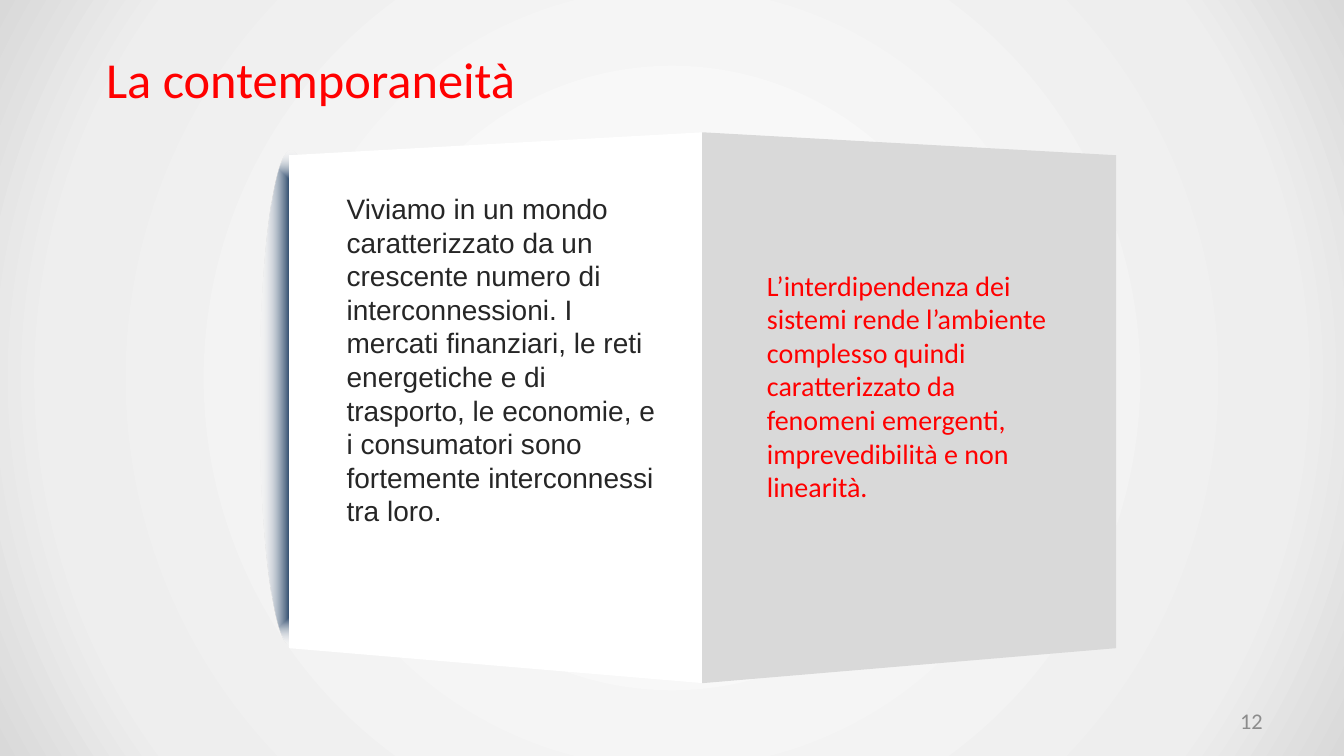
from lxml import etree
from pptx import Presentation
from pptx.dml.color import RGBColor
from pptx.enum.shapes import MSO_SHAPE
from pptx.enum.text import MSO_ANCHOR, PP_ALIGN
from pptx.oxml.ns import nsdecls
from pptx.util import Pt

OVAL = MSO_SHAPE.OVAL
TOP, MIDDLE = MSO_ANCHOR.TOP, MSO_ANCHOR.MIDDLE
LEFT, RIGHT = PP_ALIGN.LEFT, PP_ALIGN.RIGHT


def color(code):
    return RGBColor.from_string(code)


def blend(solid, shape, stops):
    """Swap a solid fill for a gradient spreading from the centre."""
    marks = "".join(
        f'<a:gs pos="{pos * 1000}"><a:srgbClr val="{code}">'
        f'<a:alpha val="{alpha * 1000}"/></a:srgbClr></a:gs>'
        for pos, code, alpha in stops)
    fill = etree.fromstring(
        f'<a:gradFill {nsdecls("a")} rotWithShape="1"><a:gsLst>{marks}</a:gsLst>'
        f'<a:path path="{shape}"><a:fillToRect l="50000" t="50000" '
        'r="50000" b="50000"/></a:path></a:gradFill>')
    solid.getparent().replace(solid, fill)


prs = Presentation()
prs.slide_width, prs.slide_height = Pt(960), Pt(540)
slide = prs.slides.add_slide(prs.slide_layouts[6])
shapes = slide.shapes

slide.background.fill.solid()
blend(slide._element.xpath(".//p:bgPr/a:solidFill")[0], "circle",
      [(0, "FFFFFF", 100), (81, "EEEEEE", 100), (100, "D9D9D9", 100)])

# Shadow behind the left edge of the book
shade = shapes.add_shape(OVAL, Pt(31), Pt(262), Pt(354.2), Pt(44.6))
shade.rotation = 270
shade.shadow.inherit = False
shade.line.fill.background()
shade.fill.solid()
blend(shade._element.xpath("./p:spPr/a:solidFill")[0], "shape",
      [(0, "17375E", 100), (100, "FFFFFF", 0)])

# Two pages: outer edge, spine, fill
for edge, spine, code in [(206.6, 502.4, "FFFFFF"), (797.2, 501.6, "D9D9D9")]:
    pen = shapes.build_freeform(Pt(edge), Pt(110.9))
    pen.add_line_segments([(Pt(x), Pt(y)) for x, y in
                           [(spine, 94.5), (spine, 488), (edge, 463)]])
    page = pen.convert_to_shape()
    page.shadow.inherit = False
    page.line.fill.background()
    page.fill.solid()
    page.fill.fore_color.rgb = color(code)

# Box, margins, anchor, alignment, size, font, colour, words
texts = [
    ((240.5, 133.2, 238.3, 250), (7.2, 3.6), TOP, LEFT, 20, "Arial", "262626",
     "Viviamo in un mondo caratterizzato da un crescente numero di "
     "interconnessioni. I mercati finanziari, le reti energetiche e di "
     "trasporto, le economie, e i consumatori sono fortemente "
     "interconnessi tra loro."),
    ((540.7, 187.9, 214.6, 201), (7.2, 3.6), TOP, LEFT, 20, "Calibri", "FF0000",
     "L’interdipendenza dei sistemi rende l’ambiente complesso quindi "
     "caratterizzato da fenomeni emergenti, imprevedibilità e non linearità."),
    ((66.2, 28.8, 828, 54.7), (9.6, 4.8), MIDDLE, LEFT, 36, "Calibri", "FF0000",
     "La contemporaneità"),
    ((687.6, 500.5, 224, 28.8), (9.6, 4.8), MIDDLE, RIGHT, 16, "Calibri",
     "8C8C8C", "12"),
]
for box, (side, end), anchor, align, size, face, code, words in texts:
    frame = shapes.add_textbox(*map(Pt, box)).text_frame
    frame.word_wrap = True
    frame.margin_left = frame.margin_right = Pt(side)
    frame.margin_top = frame.margin_bottom = Pt(end)
    frame.vertical_anchor = anchor
    frame.text = words
    par = frame.paragraphs[0]
    par.alignment = align
    font = par.runs[0].font
    font.size, font.name = Pt(size), face
    font.color.rgb = color(code)

prs.save("out.pptx")
